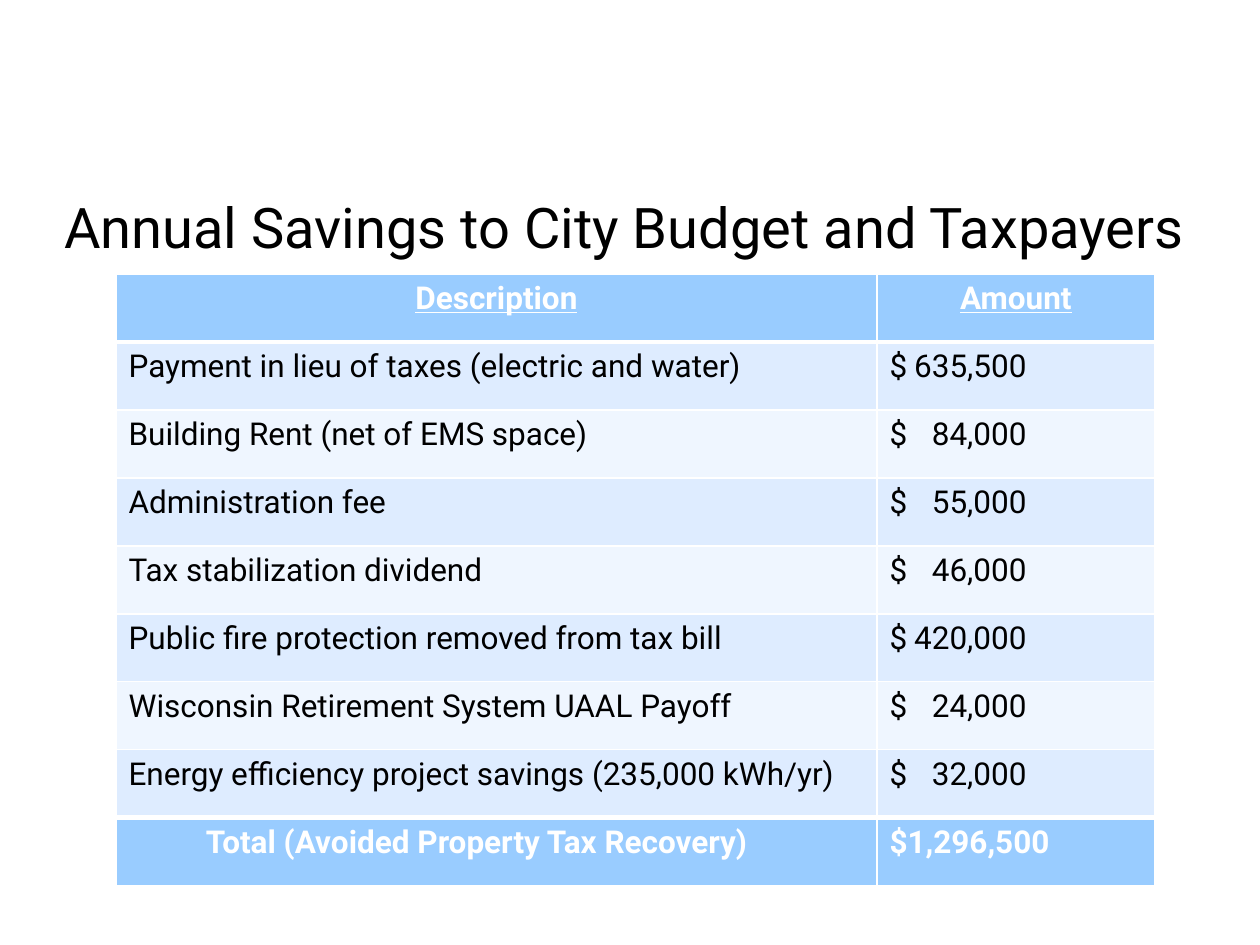
from pptx import Presentation
from pptx.dml.color import RGBColor
from pptx.enum.text import MSO_ANCHOR as Anchor, PP_ALIGN as Align
from pptx.oxml import parse_xml
from pptx.oxml.ns import nsdecls
from pptx.util import Pt

PX = 914400 // 126
NS = nsdecls("a")
SKY, PALE, MIST = "99CCFF", "DEECFF", "EFF6FF"
BLACK, WHITE = "000000", "FFFFFF"


def style(para, hue, **form):
    para.font.color.rgb = RGBColor.from_string(hue)
    for key, val in {"name": "Roboto", **form}.items():
        setattr(para.font, key, val)


def border(cell, **wide):
    props = cell._tc.get_or_add_tcPr()
    for i, side in enumerate("LRTB"):
        props.insert(i, parse_xml(
            f'<a:ln{side} {NS} w="{Pt(wide.get(side, 1))}"><a:solidFill>'
            f'<a:srgbClr val="{WHITE}"/></a:solidFill></a:ln{side}>'))


deck = Presentation()
deck.slide_width, deck.slide_height = 1260 * PX, 945 * PX
slide = deck.slides.add_slide(deck.slide_layouts[6])

# Title
box = slide.shapes.add_textbox(21 * PX, 168 * PX, 1207 * PX, 116 * PX)
frame = box.text_frame
frame.word_wrap = True
frame.vertical_anchor = Anchor.MIDDLE
title = frame.paragraphs[0]
title.text = "Annual Savings to City Budget and Taxpayers"
title.alignment = Align.CENTER
style(title, BLACK, size=Pt(32))

# Table: a tab sets each amount after its dollar sign
rows = [
    ("Description", "Amount"),
    ("Payment in lieu of taxes (electric and water)", "$\t635,500"),
    ("Building Rent (net of EMS space)", "$\t84,000"),
    ("Administration fee", "$\t55,000"),
    ("Tax stabilization dividend", "$\t46,000"),
    ("Public fire protection removed from tax bill", "$\t420,000"),
    ("Wisconsin Retirement System UAAL Payoff", "$\t24,000"),
    ("Energy efficiency project savings (235,000 kWh/yr)", "$\t32,000"),
    ("Total (Avoided Property Tax Recovery)", "$1,296,500"),
]
last = len(rows) - 1
grid = slide.shapes.add_table(len(rows), 2, 116 * PX, 274 * PX,
                              1039 * PX, 68 * len(rows) * PX).table
for col, wide in zip(grid.columns, (761, 278)):
    col.width = wide * PX

for r, row in enumerate(rows):
    head, total = r == 0, r == last
    bold = head or total
    for c, text in enumerate(row):
        cell = grid.cell(r, c)
        cell.text = text
        para = cell.text_frame.paragraphs[0]
        if "\t" in text:
            para._p.get_or_add_pPr().append(parse_xml(
                f'<a:tabLst {NS}><a:tab pos="{137 * PX}" algn="r"/></a:tabLst>'))
        style(para, WHITE if bold else BLACK, size=Pt(18), bold=bold,
              underline=head)
        if head:
            para.alignment = Align.CENTER
        cell.fill.solid()
        fill = SKY if bold else PALE if r % 2 else MIST
        cell.fill.fore_color.rgb = RGBColor.from_string(fill)
        border(cell, T=3 if r in (1, last) else 1,
               B=3 if r in (0, last - 1) else 1)

# Indent of the total label
grid.cell(last, 0).margin_left = 90 * PX

deck.save("out.pptx")
